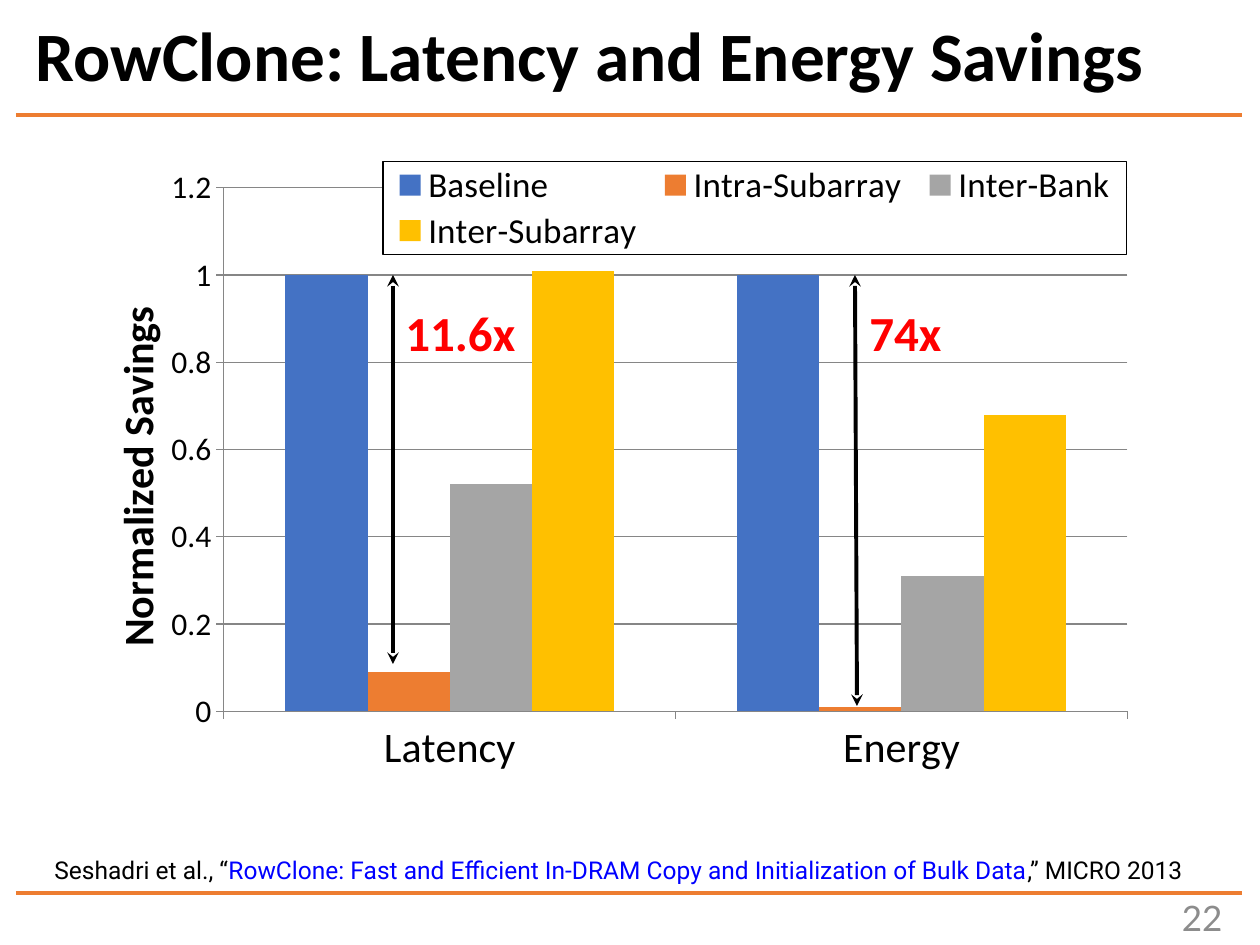
from lxml import etree
from pptx import Presentation
from pptx import util as u
from pptx.chart.data import CategoryChartData
from pptx.dml.color import RGBColor
from pptx.enum import chart as ch, shapes, text
from pptx.oxml import parse_xml
from pptx.oxml.ns import nsdecls, qn

BLACK = RGBColor(0, 0, 0)
RED = RGBColor(0xFF, 0, 0)
BLUE = RGBColor(0, 0, 0xFF)
GRAY = RGBColor(0x8C, 0x8C, 0x8C)
RULE = RGBColor(0xED, 0x7D, 0x31)
GRID = RGBColor(0x86, 0x86, 0x86)

# Content
TITLE = "RowClone: Latency and Energy Savings"
CATS = ["Latency", "Energy"]
SERIES = [
    ("Baseline", (1, 1), RGBColor(0x44, 0x72, 0xC4)),
    ("Intra-Subarray", (0.09, 0.01), RULE),
    ("Inter-Bank", (0.52, 0.31), RGBColor(0xA5, 0xA5, 0xA5)),
    ("Inter-Subarray", (1.01, 0.68), RGBColor(0xFF, 0xC0, 0)),
]
AXIS = "Normalized Savings"
# label, label width, arrow start x, arrow end x, arrow end y
GAINS = [("11.6x", 137, 393, 393, 664), ("74x", 98, 855, 857, 706)]
CITE = [
    ("Seshadri et al., “", BLACK),
    ("RowClone: Fast and Efficient In-DRAM Copy and Initialization of Bulk Data", BLUE),
    (",” MICRO 2013", BLACK),
]
PAGE = "22"
RULES = (115, 893)


def px(n):
    return u.Emu(round(n * 914400 / 126))


def style(font, size, color=BLACK, name="Calibri", bold=False):
    font.size, font.name, font.bold = u.Pt(size), name, bold
    font.color.rgb = color


def write(par, runs, size, name="Calibri", bold=False):
    for words, color in runs:
        run = par.add_run()
        run.text = words
        style(run.font, size, color, name, bold)


def label(box, runs, size, name="Calibri", bold=False, wrap=True):
    frame = slide.shapes.add_textbox(*map(px, box)).text_frame
    frame.word_wrap = wrap
    write(frame.paragraphs[0], runs, size, name, bold)
    return frame


def line(x1, y1, x2, y2, color, heads=()):
    link = slide.shapes.add_connector(
        shapes.MSO_CONNECTOR.STRAIGHT, px(x1), px(y1), px(x2), px(y2))
    link.line.color.rgb = color
    link.line.width = u.Pt(2.25)
    for end in heads:
        etree.SubElement(link.line._get_or_add_ln(), qn("a:" + end), type="stealth")
    etree.SubElement(link._element.spPr, qn("a:effectLst"))


def layout(x, y, w=None, h=None, inner=False):
    parts = [("layoutTarget", "inner")] if inner else []
    parts += [("xMode", "edge"), ("yMode", "edge"), ("x", x), ("y", y)]
    if w:
        parts += [("w", w), ("h", h)]
    body = "".join(f'<c:{tag} val="{val}"/>' for tag, val in parts)
    return parse_xml(f'<c:layout {nsdecls("c")}><c:manualLayout>{body}'
                     "</c:manualLayout></c:layout>")


def place(node, lay, after=None):
    for old in node.findall(qn("c:layout")):
        node.remove(old)
    if after is None:
        node.insert(0, lay)
    else:
        node.find(qn("c:" + after)).addnext(lay)


prs = Presentation()
prs.slide_width, prs.slide_height = px(1260), px(945)
slide = prs.slides.add_slide(prs.slide_layouts[5])

# Title
head = slide.shapes.title
head.left, head.top, head.width, head.height = map(px, (23, 18, 1226, 83))
frame = head.text_frame
frame.auto_size = text.MSO_AUTO_SIZE.NONE
frame.vertical_anchor = text.MSO_ANCHOR.MIDDLE
par = frame.paragraphs[0]
par.alignment, par.line_spacing = text.PP_ALIGN.LEFT, 0.9
write(par, [(TITLE, BLACK)], 39.6, bold=True)

# Rules and page number
for y in RULES:
    line(16, y, 1242, y, RULE)
frame = label((1099, 892, 136, 50), [(PAGE, GRAY)], 20, "Lato")
frame.vertical_anchor = text.MSO_ANCHOR.MIDDLE
frame.paragraphs[0].alignment = text.PP_ALIGN.RIGHT

# Chart
data = CategoryChartData()
data.categories = CATS
for name, vals, _ in SERIES:
    data.add_series(name, vals)
chart = slide.shapes.add_chart(
    ch.XL_CHART_TYPE.COLUMN_CLUSTERED, *map(px, (68, 160, 1113, 661)), data).chart
style(chart.font, 10)
chart.has_title = False
plot = chart.plots[0]
plot.gap_width, plot.overlap, plot.vary_by_categories = 150, 0, False
for ser, (_, _, color) in zip(plot.series, SERIES):
    ser.format.fill.solid()
    ser.format.fill.fore_color.rgb = color
place(chart._chartSpace.chart.plotArea, layout(0.14, 0.042, 0.812, 0.792, True))

# Axes
cat, val = chart.category_axis, chart.value_axis
for axis, size in ((cat, 24), (val, 18)):
    style(axis.tick_labels.font, size)
    axis.major_tick_mark = ch.XL_TICK_MARK.OUTSIDE
    axis.format.line.color.rgb = GRID
val.minimum_scale, val.maximum_scale, val.major_unit = 0, 1.2, 0.2
val.tick_labels.number_format = "General"
val.tick_labels.number_format_is_linked = False
val.major_gridlines.format.line.color.rgb = GRID
name = val.axis_title
write(name.text_frame.paragraphs[0], [(AXIS, BLACK)], 24, bold=True)
name.text_frame._txBody.bodyPr.set("rot", "-5400000")
name.text_frame._txBody.bodyPr.set("vert", "horz")
place(name._element, layout(0.03, 0.21), "tx")

# Legend
chart.has_legend = True
key = chart.legend
key.position, key.include_in_layout = ch.XL_LEGEND_POSITION.RIGHT, False
style(key.font, 20)
place(key._element, layout(0.283, 0.002, 0.668, 0.141), "legendPos")
key._element.find(qn("c:overlay")).addnext(parse_xml(
    f'<c:spPr {nsdecls("c", "a")}><a:solidFill><a:srgbClr val="FFFFFF"/></a:solidFill>'
    '<a:ln w="9525"><a:solidFill><a:srgbClr val="000000"/></a:solidFill></a:ln></c:spPr>'))

# Gain arrows and labels
for words, width, x1, x2, y2 in GAINS:
    line(x1, 275, x2, y2, BLACK, ("headEnd", "tailEnd"))
    label((x2, 296, width, 72), [(words, RED)], 28, bold=True, wrap=False)

# Citation
label((42, 849, 1188, 43), CITE, 14, "Roboto")

prs.save("out.pptx")
